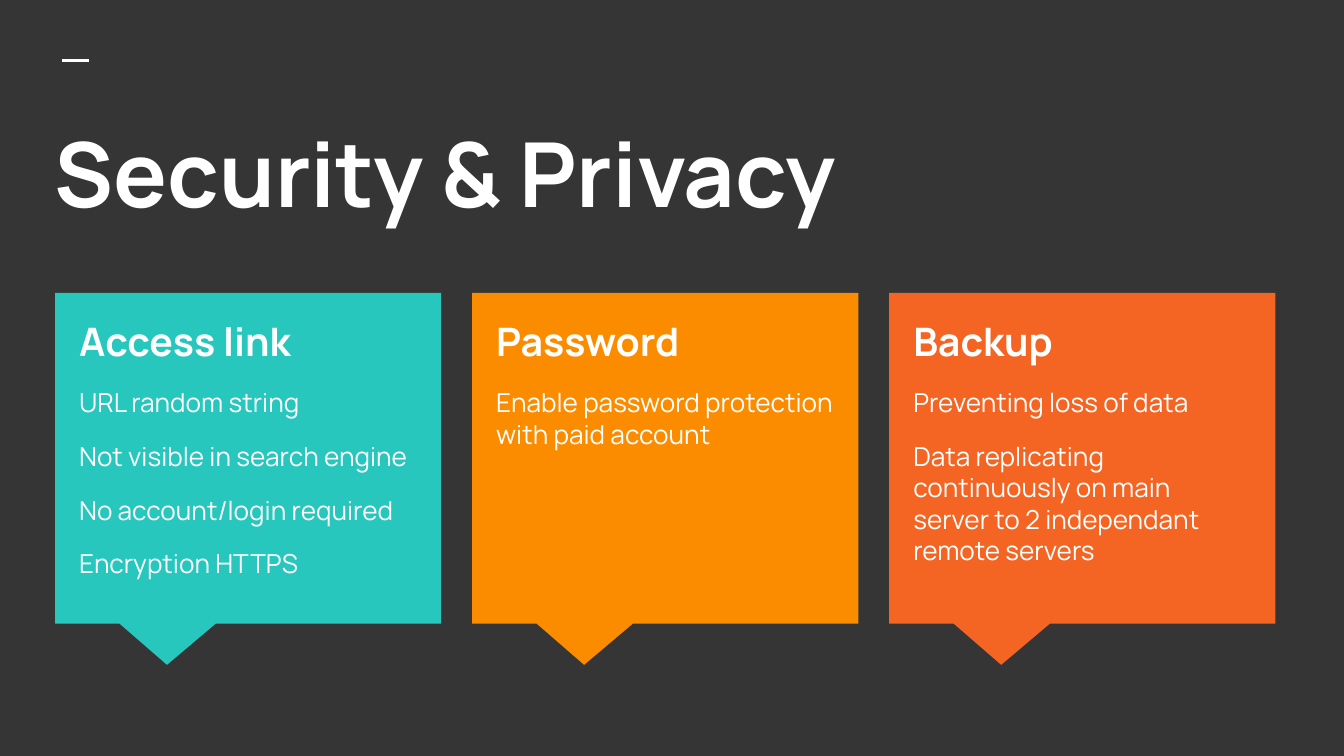
"""Build the Security & Privacy slide: a title above three coloured callouts."""
from dataclasses import dataclass

from lxml import etree
from pptx import Presentation
from pptx.dml.color import RGBColor
from pptx.enum.shapes import MSO_CONNECTOR, MSO_SHAPE
from pptx.enum.text import MSO_ANCHOR
from pptx.oxml.ns import qn
from pptx.util import Inches, Pt

CALLOUT = MSO_SHAPE.RECTANGULAR_CALLOUT
STRAIGHT = MSO_CONNECTOR.STRAIGHT
TOP = MSO_ANCHOR.TOP


@dataclass(frozen=True)
class Theme:
    font: str = "Manrope"
    background: str = "353535"
    text: str = "FFFFFF"
    title: int = 48
    heading: int = 21
    body: int = 14


theme = Theme()

CARDS = [
    ("Access link", "27C7BD", [
        "URL random string",
        "Not visible in search engine",
        "No account/login required",
        "Encryption HTTPS",
    ]),
    ("Password", "FB8C00", ["Enable password protection with paid account"]),
    ("Backup", "F46524", [
        "Preventing loss of data",
        "Data replicating continuously on main server to 2 independant remote servers",
    ]),
]

SLIDE_W = 10
SLIDE_H = SLIDE_W * 9 / 16
LEFT, RIGHT, GAP = 0.41, 9.49, 0.23
CARD_W = (RIGHT - LEFT - GAP * (len(CARDS) - 1)) / len(CARDS)
CARD_TOP, CARD_H = 2.18, 2.46
PAD = 0.08
BODY_W, BODY_H = 2.71, 2.19
DASH_X, DASH_Y, DASH_W = 0.46, 0.45, 0.2


def add_text_frame(x, y, w, h):
    tf = s.shapes.add_textbox(Inches(x), Inches(y), Inches(w), Inches(h)).text_frame
    tf.word_wrap = True
    tf.vertical_anchor = TOP
    tf.margin_left = tf.margin_right = tf.margin_top = tf.margin_bottom = Inches(0.1)
    return tf


def add_run(p, text, size, bold):
    r = p.add_run()
    r.text = text
    r.font.name = theme.font
    r.font.size = Pt(size)
    r.font.bold = bold
    r.font.color.rgb = RGBColor.from_string(theme.text)


prs = Presentation()
prs.slide_width, prs.slide_height = Inches(SLIDE_W), Inches(SLIDE_H)
s = prs.slides.add_slide(prs.slide_layouts[6])
s.background.fill.solid()
s.background.fill.fore_color.rgb = RGBColor.from_string(theme.background)

dash = s.shapes.add_connector(
    STRAIGHT, Inches(DASH_X), Inches(DASH_Y), Inches(DASH_X + DASH_W), Inches(DASH_Y))
dash.line.color.rgb = RGBColor.from_string(theme.text)
dash.line.width = Pt(1.5)
etree.SubElement(dash._element.spPr, qn("a:effectLst"))

tf = add_text_frame(0.31, 0.78, 9.43, 1.12)
add_run(tf.paragraphs[0], "Security & Privacy", theme.title, True)

for col, (heading, color, lines) in enumerate(CARDS):
    x = LEFT + col * (CARD_W + GAP)
    sp = s.shapes.add_shape(CALLOUT, Inches(x), Inches(CARD_TOP), Inches(CARD_W), Inches(CARD_H))
    sp.adjustments[0], sp.adjustments[1] = -0.21, 0.625
    sp.shadow.inherit = False
    sp.fill.solid()
    sp.fill.fore_color.rgb = RGBColor.from_string(color)
    sp.line.fill.background()

    tf = add_text_frame(x + PAD, CARD_TOP + PAD, BODY_W, BODY_H)
    add_run(tf.paragraphs[0], heading, theme.heading, True)
    for line in lines:
        p = tf.add_paragraph()
        p.space_before = Pt(12)
        add_run(p, line, theme.body, False)

prs.save("out.pptx")
